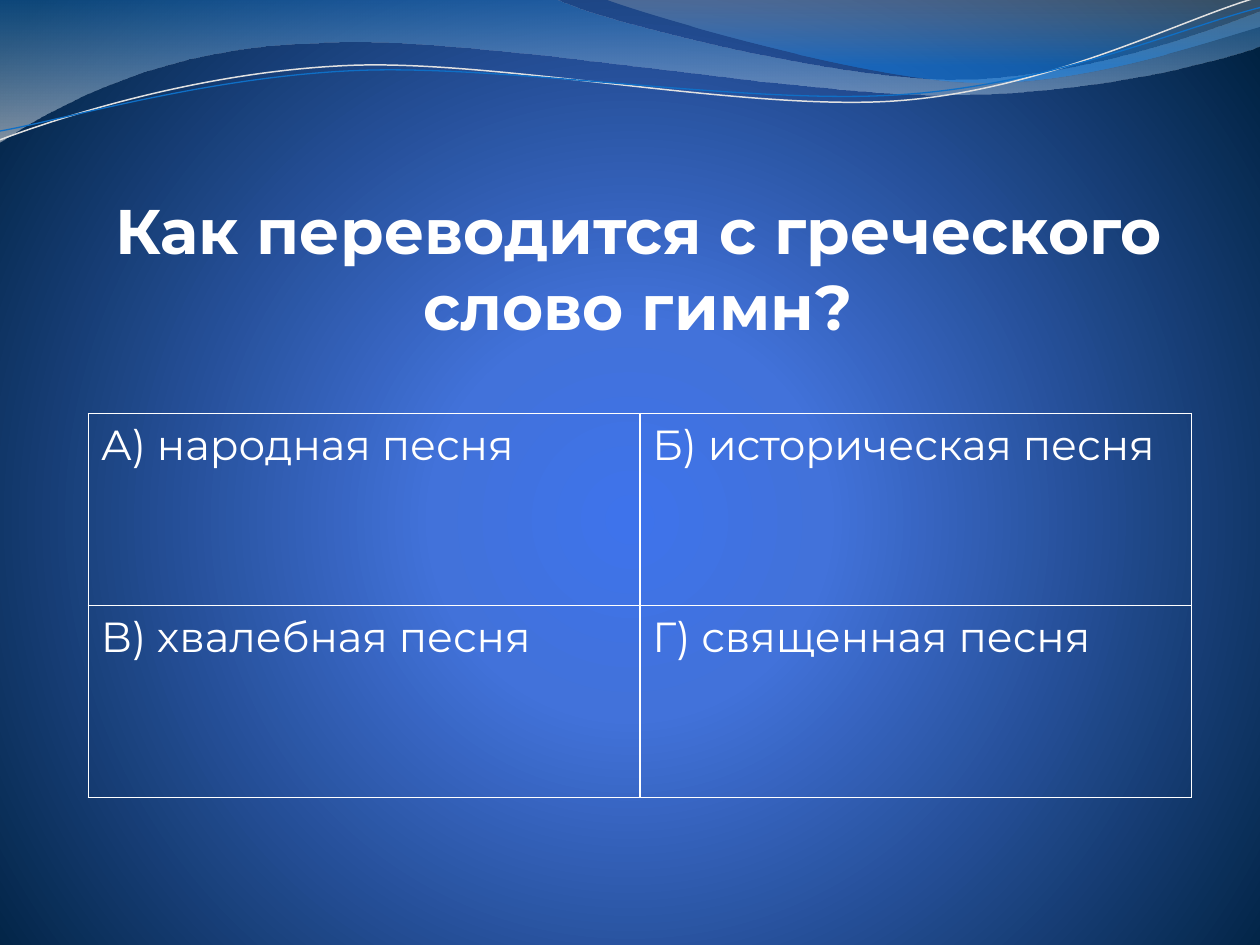
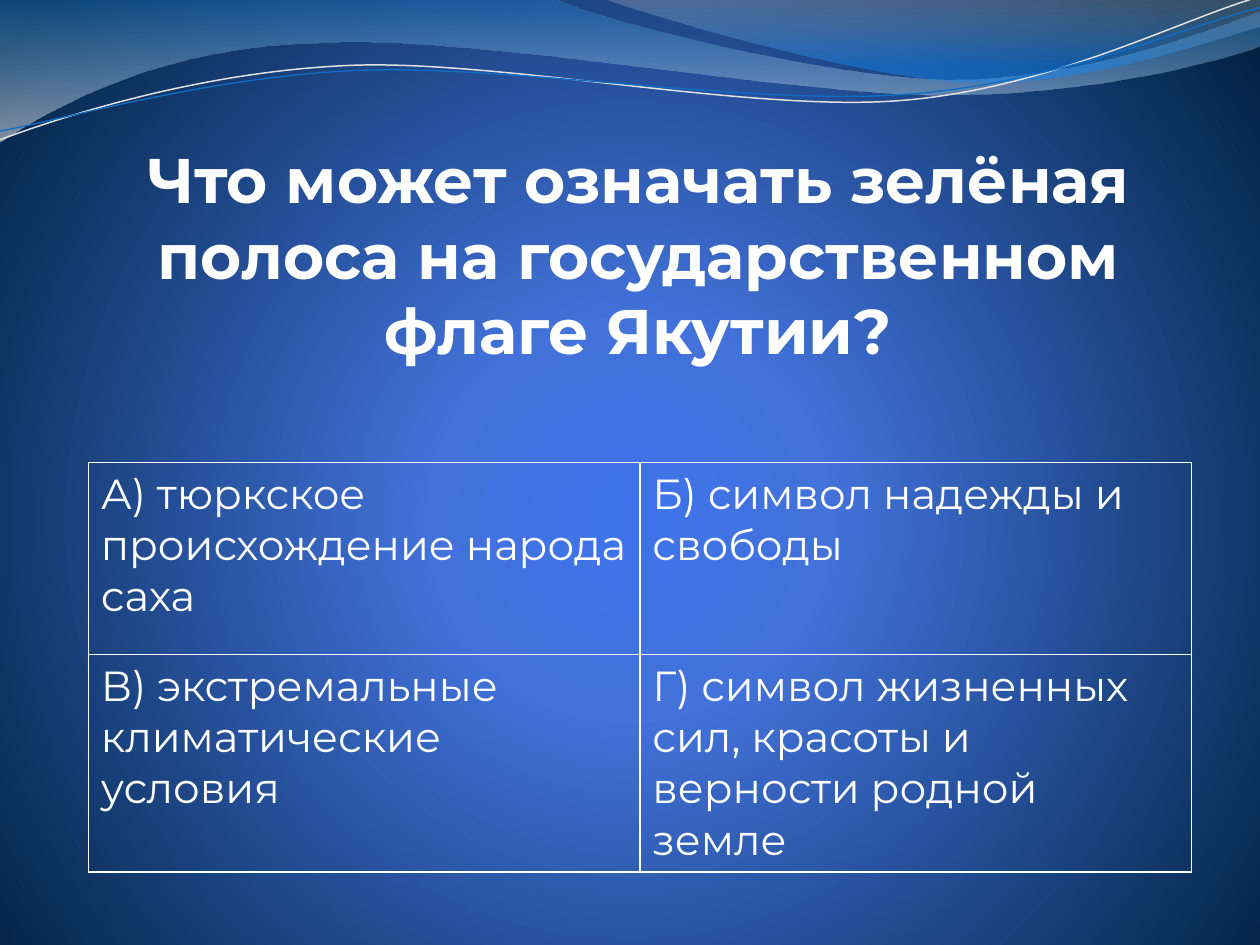
from dataclasses import dataclass

from lxml import etree
from pptx import Presentation
from pptx.dml.color import RGBColor
from pptx.enum.text import MSO_ANCHOR, MSO_AUTO_SIZE, PP_ALIGN
from pptx.oxml.ns import qn
from pptx.util import Cm, Pt

CENTER = PP_ALIGN.CENTER
BOTTOM = MSO_ANCHOR.BOTTOM
NO_AUTOFIT = MSO_AUTO_SIZE.NONE
TITLE_ONLY = 5


@dataclass(frozen=True)
class Theme:
    font: str = "Montserrat"
    text: str = "FFFFFF"
    title_size: int = 36
    answer_size: int = 24
    border_width: float = 1
    background: tuple = ((0, "3E73EB", 100), (25, "4272DA", 100), (100, "002241", 100))
    wide_band: tuple = ((0, "1D73BF", 45), (100, "E7E7E7", 55))
    corner_band: tuple = ((0, "BDBDBD", 30), (80, "138AF4", 45))
    light_line: tuple = ("E1E1E1", 0.85)
    blue_line: tuple = ("0F6FC6", 0.75)


THEME = Theme()

WIDE_BAND = [
    (0, 0), (4.4, -0.01),
    (4.76, 0.17, 6.64, 0.63, 7.58, 0.63),
    (8.53, 0.63, 9.58, 0.26, 10, 0.09),
    (10.01, 0.36),
    (9.83, 0.44, 8.7, 0.76, 7.46, 0.75),
    (6.22, 0.75, 3.82, 0.28, 2.57, 0.34),
    (1.29, 0.36, 0.46, 0.83, -0.01, 1.13),
    (0, 0),
]
CORNER_BAND = [
    (4.79, -0.01),
    (5.09, 0.11, 6.82, 0.62, 7.69, 0.65),
    (8.56, 0.69, 9.61, 0.32, 10, 0.21),
    (10, 0), (4.79, -0.01),
]
LIGHT_LINE = [
    (0, 1.11),
    (0.48, 0.93, 1.58, 0.57, 2.77, 0.52),
    (3.95, 0.47, 5.93, 0.89, 7.13, 0.8),
    (8.33, 0.71, 9.38, 0.15, 9.98, -0.02),
]
BLUE_LINE = [
    (0, 1.04),
    (0.47, 0.96, 1.64, 0.61, 2.83, 0.56),
    (4.03, 0.51, 5.97, 0.84, 7.17, 0.75),
    (8.36, 0.67, 9.41, 0.21, 10, 0.06),
]

QUESTIONS = [
    {
        "title": "Как переводится с греческого слово гимн?",
        "title_top": 3.18, "title_height": 3.73, "title_inset": 0,
        "table_top": 8.34,
        "answers": [
            ["А) народная песня", "Б) историческая песня"],
            ["В) хвалебная песня", "Г) священная песня"],
        ],
    },
    {
        "title": "Что может означать зелёная полоса на государственном флаге Якутии?",
        "title_top": 4.95, "title_height": 3.96, "title_inset": 1.5,
        "table_top": 9.32,
        "answers": [
            ["А) тюркское происхождение народа саха", "Б) символ надежды и свободы"],
            ["В) экстремальные климатические условия",
             "Г) символ жизненных сил, красоты и верности родной земле"],
        ],
    },
]


def to_points(segment):
    return [(Cm(2.54 * x), Cm(2.54 * y)) for x, y in zip(segment[::2], segment[1::2])]


def add_xml(parent, tag, **attributes):
    return etree.SubElement(parent, qn(tag), {key: str(value) for key, value in attributes.items()})


def bend_segments(shape, segments):
    lines = list(shape.element.iter(qn("a:lnTo")))
    for line, points in zip(lines, segments):
        if len(points) == 1:
            continue
        curve = etree.Element(qn("a:cubicBezTo"))
        for x, y in points:
            add_xml(curve, "a:pt", x=x - shape.left, y=y - shape.top)
        line.getparent().replace(line, curve)


def solid_to_gradient(properties, stops, radial=False):
    solid = properties.find(qn("a:solidFill"))
    gradient = etree.Element(qn("a:gradFill"), rotWithShape="1")
    stop_list = add_xml(gradient, "a:gsLst")
    for position, color, opacity in stops:
        stop = add_xml(stop_list, "a:gs", pos=position * 1000)
        shade = add_xml(stop, "a:srgbClr", val=color)
        if opacity < 100:
            add_xml(shade, "a:alpha", val=opacity * 1000)
    if radial:
        circle = add_xml(gradient, "a:path", path="circle")
        add_xml(circle, "a:fillToRect", l=10000, t=110000, r=10000, b=100000)
    else:
        add_xml(gradient, "a:lin", ang=5400000, scaled=1)
    properties.replace(solid, gradient)


class QuizDeck:
    def __init__(self, theme):
        self.theme = theme
        self.presentation = Presentation()
        self.presentation.slide_width = Cm(25.4)
        self.presentation.slide_height = Cm(19.05)
        self.layout = self.presentation.slide_layouts[TITLE_ONLY]
        self.slide = None

    def add_slide(self):
        self.slide = self.presentation.slides.add_slide(self.layout)

    def set_background(self):
        self.layout.background.fill.solid()
        properties = next(self.layout.element.iter(qn("p:bgPr")))
        solid_to_gradient(properties, self.theme.background, radial=True)

    def add_wave(self, outline, closed):
        start, *segments = [to_points(segment) for segment in outline]
        builder = self.slide.shapes.build_freeform(*start[0])
        builder.add_line_segments([points[-1] for points in segments], close=closed)
        shape = builder.convert_to_shape()
        bend_segments(shape, segments)
        shape.shadow.inherit = False
        tree = self.layout.shapes.element
        shape.element.nvSpPr.cNvPr.set("id", str(100 + len(tree)))
        tree.append(shape.element)
        return shape

    def add_band(self, outline, stops):
        band = self.add_wave(outline, closed=True)
        band.line.fill.background()
        band.fill.solid()
        solid_to_gradient(band.element.spPr, stops)

    def add_line(self, outline, style):
        color, width = style
        line = self.add_wave(outline, closed=False)
        line.fill.background()
        line.line.color.rgb = RGBColor.from_string(color)
        line.line.width = Pt(width)

    def decorate_layout(self):
        self.set_background()
        self.add_band(WIDE_BAND, self.theme.wide_band)
        self.add_band(CORNER_BAND, self.theme.corner_band)
        self.add_line(LIGHT_LINE, self.theme.light_line)
        self.add_line(BLUE_LINE, self.theme.blue_line)

    def add_text(self, paragraph, text, size, bold=False):
        run = paragraph.add_run()
        run.text = text
        run.font.name = self.theme.font
        run.font.size = Pt(size)
        run.font.bold = bold
        run.font.color.rgb = RGBColor.from_string(self.theme.text)

    def add_title(self, text, top, height, bottom_inset):
        title = self.slide.shapes.title
        title.left, title.top = Cm(1.58), Cm(top)
        title.width, title.height = Cm(22.63), Cm(height)
        frame = title.text_frame
        frame.auto_size = NO_AUTOFIT
        frame.word_wrap = True
        frame.vertical_anchor = BOTTOM
        frame.margin_left = frame.margin_top = Cm(0)
        frame.margin_right = Cm(0.05)
        frame.margin_bottom = Cm(bottom_inset)
        paragraph = frame.paragraphs[0]
        paragraph.alignment = CENTER
        self.add_text(paragraph, text, self.theme.title_size, bold=True)

    def add_borders(self, cell):
        properties = cell._tc.get_or_add_tcPr()
        for side in ("a:lnL", "a:lnR", "a:lnT", "a:lnB"):
            border = add_xml(properties, side, w=Pt(self.theme.border_width))
            add_xml(add_xml(border, "a:solidFill"), "a:srgbClr", val=self.theme.text)

    def add_answers(self, answers, top):
        rows, columns = len(answers), len(answers[0])
        row_height = Cm(3.87)
        table = self.slide.shapes.add_table(
            rows, columns, Cm(1.78), Cm(top), Cm(22.24), row_height * rows
        ).table
        table.first_row = False
        table.horz_banding = False
        for row, texts in enumerate(answers):
            table.rows[row].height = row_height
            for column, text in enumerate(texts):
                cell = table.cell(row, column)
                self.add_borders(cell)
                cell.fill.background()
                self.add_text(cell.text_frame.paragraphs[0], text, self.theme.answer_size)


def main():
    deck = QuizDeck(THEME)
    for number, question in enumerate(QUESTIONS):
        deck.add_slide()
        if number == 0:
            deck.decorate_layout()
        deck.add_title(question["title"], question["title_top"],
                       question["title_height"], question["title_inset"])
        deck.add_answers(question["answers"], question["table_top"])
    deck.presentation.save("out.pptx")


if __name__ == "__main__":
    main()
